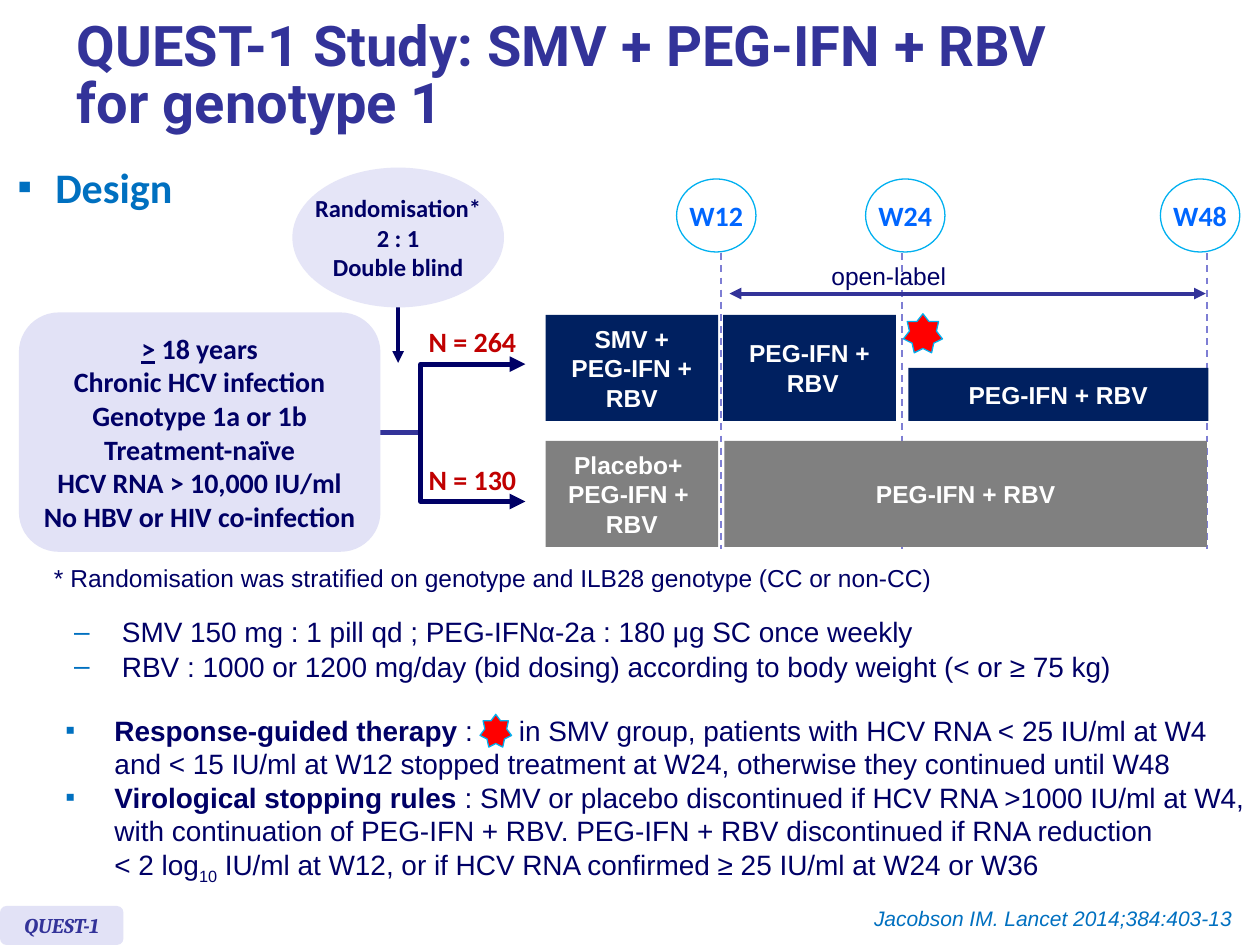
"""Build the QUEST-1 study design slide."""
from dataclasses import dataclass
from typing import NamedTuple

from lxml.etree import SubElement
from pptx import Presentation
from pptx.dml.color import RGBColor
from pptx.enum.dml import MSO_LINE_DASH_STYLE as Dash
from pptx.enum.shapes import MSO_CONNECTOR as Link, MSO_SHAPE as Preset
from pptx.enum.text import MSO_ANCHOR as Anchor, PP_ALIGN as Align
from pptx.oxml.ns import qn
from pptx.util import Inches, Pt


@dataclass(frozen=True)
class Theme:
    """Colours and type sizes."""
    ink: str = "000066"
    indigo: str = "333399"
    blue: str = "0070C0"
    sky: str = "00B0F0"
    week: str = "0066FF"
    navy: str = "002060"
    grey: str = "808080"
    lilac: str = "E2E2F6"
    pale: str = "E5E5F7"
    guide: str = "7E7ED4"
    crimson: str = "C00000"
    red: str = "FF0000"
    white: str = "FFFFFF"
    title: int = 32
    heading: int = 24
    body: int = 16
    label: int = 14
    small: int = 12


class Box(NamedTuple):
    """Left, top, width and height in inches."""
    left: float
    top: float
    width: float
    height: float


class Arm(NamedTuple):
    """A treatment period bar."""
    box: Box
    fill: str
    lines: list


class Week(NamedTuple):
    """A time point with its circle and guide positions."""
    name: str
    left: float
    guide: float


THEME = Theme()
ARMS = [
    Arm(Box(4.33, 3.5, 1.37, 0.84), THEME.grey, ["Placebo+ ", "PEG-IFN + ", "RBV"]),
    Arm(Box(4.33, 2.5, 1.37, 0.84), THEME.navy, ["SMV +", " PEG-IFN + ", "RBV"]),
    Arm(Box(5.74, 2.5, 1.37, 0.84), THEME.navy, ["PEG-IFN +", " RBV"]),
    Arm(Box(7.21, 2.92, 2.38, 0.42), THEME.navy, ["PEG-IFN + RBV"]),
    Arm(Box(5.75, 3.5, 3.83, 0.84), THEME.grey, ["PEG-IFN + RBV"]),
]
WEEKS = [Week("W12", 5.37, 5.72), Week("W24", 6.87, 7.16), Week("W48", 9.21, 9.58)]
GROUPS = [("N = 264", 2.53), ("N = 130", 3.62)]


def colour(code: str) -> RGBColor:
    """Return the colour for a hex code."""
    return RGBColor.from_string(code)


def write(para, text: str, *, size=THEME.body, face="Arial", tint=THEME.ink, bold=False,
          italic=False, underline=False, baseline=0) -> None:
    """Append formatted text, turning newlines into line breaks."""
    for index, piece in enumerate(text.split("\n")):
        if index:
            para.add_line_break()
        span = para.add_run()
        span.text = piece
        font = span.font
        font.size, font.name, font.bold = Pt(size), face, bold
        font.italic, font.underline = italic, underline
        font.color.rgb = colour(tint)
        if baseline:
            font._element.set("baseline", str(baseline))


def fill_lines(shape, lines: list, *, align=Align.CENTER, anchor=Anchor.MIDDLE,
               wrap=False, **style) -> None:
    """Write one paragraph for each line."""
    frame = shape.text_frame
    frame.word_wrap, frame.vertical_anchor = wrap, anchor
    for index, line in enumerate(lines):
        para = frame.add_paragraph() if index else frame.paragraphs[0]
        para.alignment = align
        write(para, line, **style)


def bullet(para, mark: str, indent: float, tab: float = 0) -> None:
    """Give a paragraph a hanging bullet and an optional tab stop."""
    settings = para._p.get_or_add_pPr()
    settings.set("marL", str(Inches(indent)))
    settings.set("indent", str(-Inches(indent)))
    tint = SubElement(settings, qn("a:buClr"))
    SubElement(tint, qn("a:srgbClr"), val=THEME.blue)
    SubElement(settings, qn("a:buFont"), typeface="Arial")
    SubElement(settings, qn("a:buChar"), char=mark)
    if tab:
        stops = SubElement(settings, qn("a:tabLst"))
        SubElement(stops, qn("a:tab"), pos=str(Inches(tab)), algn="l")


def add_text(page, box: Box, lines: list = (), **style):
    """Add a text box."""
    shape = page.shapes.add_textbox(*map(Inches, box))
    fill_lines(shape, lines, **{"anchor": Anchor.TOP, **style})
    return shape


def add_bullets(page, box: Box, mark: str, indent: float, items: list, *, gap=0.0, tab=0.0) -> None:
    """Add a bulleted list whose items are lists of (text, format) pairs."""
    frame = add_text(page, box, wrap=True).text_frame
    for index, item in enumerate(items):
        para = frame.add_paragraph() if index else frame.paragraphs[0]
        bullet(para, mark, indent, 0 if index else tab)
        if index:
            para.space_before = Pt(gap)
        for text, style in item:
            write(para, text, **style)


def add_block(page, preset, box: Box, fill: str, lines: list = (), *, outline="", **style):
    """Add a flat preset shape with optional outline and text."""
    shape = page.shapes.add_shape(preset, *map(Inches, box))
    shape.shadow.inherit = False
    shape.fill.solid()
    shape.fill.fore_color.rgb = colour(fill)
    if outline:
        shape.line.color.rgb, shape.line.width = colour(outline), Pt(0.75)
    else:
        shape.line.fill.background()
    fill_lines(shape, lines, **style)
    return shape


def style_line(shape, tint: str, width: float, *, head=False, tail=False, dash=False) -> None:
    """Format a line and its arrowheads."""
    shape.line.color.rgb, shape.line.width = colour(tint), Pt(width)
    if dash:
        shape.line.dash_style = Dash.DASH
    for end, shown in (("a:headEnd", head), ("a:tailEnd", tail)):
        if shown:
            SubElement(shape.line._get_or_add_ln(), qn(end), type="triangle")


def add_line(page, start: tuple, end: tuple, tint: str, width: float, **style) -> None:
    """Add a straight line without shadow."""
    shape = page.shapes.add_connector(Link.STRAIGHT, *map(Inches, start + end))
    style_line(shape, tint, width, **style)
    SubElement(shape._element.spPr, qn("a:effectLst"))


def add_fork(page, points: list) -> None:
    """Add the forked arrow that leads to both groups."""
    builder = page.shapes.build_freeform(*map(Inches, points[0]))
    builder.add_line_segments([tuple(map(Inches, point)) for point in points[1:]], close=False)
    shape = builder.convert_to_shape()
    shape.shadow.inherit = False
    shape.fill.background()
    style_line(shape, THEME.ink, 3, head=True, tail=True)


def add_headings(page) -> None:
    """Add the title, section heading, citation and study tag."""
    title = page.shapes.title
    title.left, title.top, title.width, title.height = map(Inches, Box(0.51, 0.08, 9.13, 1.07))
    fill_lines(title, ["QUEST-1 Study: SMV + PEG-IFN + RBV \nfor genotype 1"], align=Align.LEFT,
               wrap=True, size=THEME.title, face="Roboto", tint=THEME.indigo, bold=True)
    title.text_frame.paragraphs[0].line_spacing = 0.85
    design = {"size": THEME.heading, "face": "Calibri", "tint": THEME.blue, "bold": True}
    add_bullets(page, Box(0.04, 1.23, 1.98, 0.63), "▪", 0.3, [[("Design", design)]])
    add_text(page, Box(6.82, 7.14, 3.06, 0.3), ["Jacobson IM. Lancet 2014;384:403-13"],
             align=Align.RIGHT, size=THEME.small, tint=THEME.blue, italic=True)
    add_block(page, Preset.ROUNDED_RECTANGLE, Box(0, 7.19, 0.98, 0.31), THEME.lilac, ["QUEST-1"],
              size=THEME.small, face="Cambria", tint=THEME.indigo, bold=True, italic=True)


def add_diagram(page) -> None:
    """Draw the patient flow and the treatment timeline."""
    strong = {"face": "Calibri", "bold": True}
    add_line(page, (3.16, 2.44), (3.16, 2.88), THEME.ink, 2.25, tail=True)
    add_block(page, Preset.OVAL, Box(2.32, 1.33, 1.68, 1.11), THEME.pale,
              ["Randomisation*", "2 : 1", "Double blind"], size=THEME.label, **strong)
    add_fork(page, [(4.17, 2.89), (3.34, 2.89), (3.34, 3.98), (4.17, 3.98)])
    add_line(page, (2.85, 3.43), (3.32, 3.43), THEME.indigo, 3)
    for name, top in GROUPS:
        add_text(page, Box(3.3, top, 0.9, 0.37), [name], tint=THEME.crimson, **strong)
    for week in WEEKS:
        add_block(page, Preset.OVAL, Box(week.left, 1.42, 0.63, 0.58), THEME.white, [week.name],
                  outline=THEME.sky, tint=THEME.week, **strong)
        add_line(page, (week.guide, 2.01), (week.guide, 4.36), THEME.guide, 1, dash=True)
    for arm in ARMS:
        add_block(page, Preset.RECTANGLE, arm.box, arm.fill, arm.lines,
                  size=THEME.label, tint=THEME.white, bold=True)
    for box in (Box(7.17, 2.49, 0.31, 0.31), Box(3.81, 5.67, 0.25, 0.26)):
        add_block(page, Preset.STAR_7_POINT, box, THEME.red, outline=THEME.sky)
    add_line(page, (5.79, 2.33), (9.57, 2.33), THEME.indigo, 2.25, head=True, tail=True)
    add_text(page, Box(6.5, 2.02, 1.12, 0.34), ["open-label"], align=Align.LEFT, size=THEME.label)
    patients = add_block(page, Preset.ROUNDED_RECTANGLE, Box(0.15, 2.48, 2.87, 1.9), THEME.lilac, [
        "", "Chronic HCV infection", "Genotype 1a or 1b", "Treatment-naïve",
        "HCV RNA > 10,000 IU/ml", "No HBV or HIV co-infection"], **strong)
    age = patients.text_frame.paragraphs[0]
    age.clear()
    write(age, ">", underline=True, **strong)
    write(age, " 18 years", **strong)


def add_notes(page) -> None:
    """Add the footnote, dosing and stopping rules."""
    add_text(page, Box(0.33, 4.42, 9.55, 0.34),
             ["* Randomisation was stratified on genotype and ILB28 genotype (CC or non-CC)"],
             align=Align.LEFT, wrap=True, size=THEME.label)
    add_bullets(page, Box(0.49, 4.83, 9.47, 0.65), "–", 0.38, [
        [("SMV 150 mg : 1 pill qd ; PEG-IFNα-2a : 180 μg SC once weekly", {})],
        [("RBV : 1000 or 1200 mg/day (bid dosing) according to body weight (< or ≥ 75 kg)", {})],
    ], gap=0.7)
    add_bullets(page, Box(0.42, 5.61, 9.58, 1.45), "▪", 0.39, [
        [("Response-guided therapy ", {"bold": True}),
         (":\tin SMV group, patients with HCV RNA < 25 IU/ml at W4 and < 15 IU/ml at W12 "
          "stopped treatment at W24, otherwise they continued until W48", {})],
        [("Virological stopping rules ", {"bold": True}),
         (": SMV or placebo discontinued if HCV RNA >1000 IU/ml at W4, with continuation of "
          "PEG-IFN + RBV. PEG-IFN + RBV discontinued if RNA reduction \n< 2 log", {}),
         ("10", {"baseline": -25000}),
         (" IU/ml at W12, or if HCV RNA confirmed ≥ 25 IU/ml at W24 or W36", {})],
    ], tab=3.6)


def main() -> None:
    """Build and save the deck."""
    deck = Presentation()
    deck.slide_width, deck.slide_height = Inches(10), Inches(7.5)
    page = deck.slides.add_slide(deck.slide_layouts[5])
    add_headings(page)
    add_diagram(page)
    add_notes(page)
    deck.save("out.pptx")


if __name__ == "__main__":
    main()
